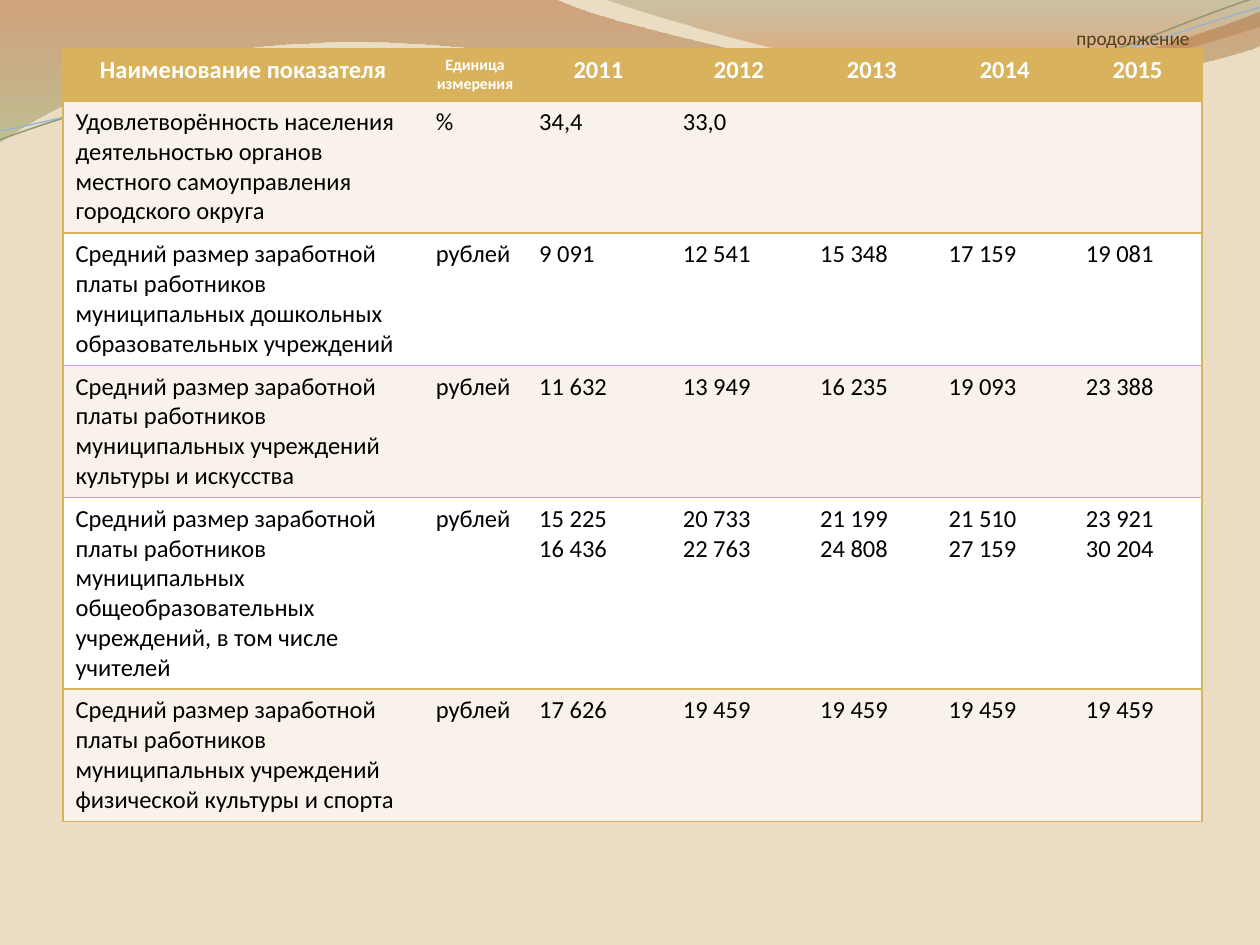
from lxml.etree import SubElement
from pptx import Presentation
from pptx.dml.color import RGBColor
from pptx.enum.text import PP_ALIGN as Align
from pptx.oxml import parse_xml
from pptx.oxml.ns import nsdecls, qn
from pptx.util import Inches, Pt

SAND = RGBColor(0xEB, 0xDD, 0xC3)
GOLD = RGBColor(0xD8, 0xB2, 0x5C)
CREAM = RGBColor(0xF8, 0xF2, 0xEA)
WHITE = RGBColor(0xFF, 0xFF, 0xFF)
BLACK = RGBColor(0, 0, 0)
BROWN = RGBColor(0x51, 0x3E, 0x1B)
OLIVE = RGBColor(0x92, 0x97, 0x72)
BLUE = RGBColor(0x94, 0xB6, 0xD2)
RUST = RGBColor(0xAF, 0x5C, 0x29)
MOSS = RGBColor(0x9D, 0xA6, 0x6B)
SAGE = RGBColor(0x7D, 0x83, 0x5B)
ORANGE = RGBColor(0xDD, 0x6B, 0x24)
FONT = "Calibri"

presentation = Presentation()
presentation.slide_width, presentation.slide_height = Inches(10), Inches(7.5)
WIDTH, HEIGHT = presentation.slide_width, presentation.slide_height
slide = presentation.slides.add_slide(presentation.slide_layouts[6])
slide.background.fill.solid()
slide.background.fill.fore_color.rgb = SAND


def add_wave(segments, closed):
    """Draw a path of points (2 numbers) and cubic curves (6 numbers), in inches."""
    segments = [[round(value * 100) for value in segment] for segment in segments]
    ends = [segment[-2:] for segment in segments]
    builder = slide.shapes.build_freeform(*ends[0], scale=Inches(0.01))
    builder.add_line_segments(ends[1:], close=closed)
    shape = builder.convert_to_shape()
    shape.shadow.inherit = False
    # Turn the straight pieces that have control points into curves
    left, top = (min(values) for values in zip(*ends))
    pieces = list(shape.element.iter(qn("a:lnTo")))
    for piece, segment in zip(pieces, segments[1:]):
        if len(segment) == 6:
            piece.tag = qn("a:cubicBezTo")
            piece.clear()
            for x, y in zip(segment[::2], segment[1::2]):
                SubElement(piece, qn("a:pt"), x=str(x - left), y=str(y - top))
    return shape


# Translucent waves: path, then gradient stops (position %, colour, opacity %)
waves = [
    ([(0, 0), (4.4, -0.01), (4.76, 0.17, 6.64, 0.63, 7.58, 0.63),
      (8.53, 0.63, 9.58, 0.26, 10, 0.09), (10.01, 0.36),
      (9.83, 0.44, 8.7, 0.76, 7.46, 0.75), (6.22, 0.75, 3.82, 0.28, 2.57, 0.34),
      (1.29, 0.36, 0.46, 0.83, -0.01, 1.13)],
     [(0, RUST, 45), (100, MOSS, 55)]),
    ([(4.79, -0.01), (5.09, 0.11, 6.82, 0.62, 7.69, 0.65),
      (8.56, 0.69, 9.61, 0.32, 10, 0.21), (10, 0)],
     [(0, SAGE, 30), (80, ORANGE, 45)]),
]
for path, stops in waves:
    wave = add_wave(path, True)
    wave.line.fill.background()
    stop_xml = "".join(
        f'<a:gs pos="{position * 1000}"><a:srgbClr val="{color}">'
        f'<a:alpha val="{opacity * 1000}"/></a:srgbClr></a:gs>'
        for position, color, opacity in stops)
    gradient = parse_xml(f'<a:gradFill {nsdecls("a")}><a:gsLst>{stop_xml}</a:gsLst>'
                         '<a:lin ang="5400000" scaled="0"/></a:gradFill>')
    wave.element.spPr.find(qn("a:custGeom")).addnext(gradient)

# Thin curved lines
curves = [
    ([(0, 1.11), (0.48, 0.93, 1.58, 0.57, 2.77, 0.52),
      (3.95, 0.47, 5.93, 0.89, 7.13, 0.8), (8.33, 0.71, 9.38, 0.15, 9.98, -0.02)],
     OLIVE, 0.85),
    ([(0, 1.04), (0.47, 0.96, 1.64, 0.61, 2.83, 0.56),
      (4.03, 0.51, 5.97, 0.84, 7.17, 0.75), (8.36, 0.67, 9.41, 0.21, 10, 0.06)],
     BLUE, 0.75),
]
for path, color, weight in curves:
    curve = add_wave(path, False)
    curve.fill.background()
    curve.line.color.rgb = color
    curve.line.width = Pt(weight)

# Table of indicators
SALARY = "Средний размер заработной платы работников муниципальных "
rows = [
    ["Наименование показателя", "Единица измерения", "2011", "2012", "2013", "2014", "2015"],
    ["Удовлетворённость населения деятельностью органов местного самоуправления "
     "городского округа", "%", "34,4", "33,0", "", "", ""],
    [SALARY + "дошкольных образовательных учреждений", "рублей",
     "9 091", "12 541", "15 348", "17 159", "19 081"],
    [SALARY + "учреждений культуры и искусства", "рублей",
     "11 632", "13 949", "16 235", "19 093", "23 388"],
    [SALARY + "общеобразовательных учреждений, в том числе учителей", "рублей",
     "15 225\n16 436", "20 733\n22 763", "21 199\n24 808", "21 510\n27 159", "23 921\n30 204"],
    [SALARY + "учреждений физической культуры и спорта", "рублей",
     "17 626", "19 459", "19 459", "19 459", "19 459"],
]
column_widths = [2.86, 0.82, 1.14, 1.09, 1.02, 1.09, 1.02]
row_heights = [0.41, 1.05, 1.05, 1.05, 1.52, 1.05]
frame = slide.shapes.add_table(len(rows), len(column_widths), int(WIDTH * 0.05), Inches(0.39),
                               Inches(sum(column_widths)), Inches(sum(row_heights)))
table = frame.table
NO_STYLE = "{2D5ABB26-0587-4C30-8999-92F81FD0307C}"
frame.element.find(".//" + qn("a:tableStyleId")).text = NO_STYLE
for column, width in zip(table.columns, column_widths):
    column.width = Inches(width)
for row, height in zip(table.rows, row_heights):
    row.height = Inches(height)

last = len(column_widths) - 1
for r, texts in enumerate(rows):
    for c, text in enumerate(texts):
        cell = table.cell(r, c)
        properties = cell._tc.get_or_add_tcPr()
        sides = ["L"] * (c == 0) + ["R"] * (c == last) + ["T", "B"]
        for side in sides:
            border = SubElement(properties, qn(f"a:ln{side}"), w=str(Pt(1)))
            solid = SubElement(border, qn("a:solidFill"))
            SubElement(solid, qn("a:srgbClr"), val=str(GOLD))
        cell.fill.solid()
        cell.fill.fore_color.rgb = GOLD if r == 0 else CREAM if r % 2 else WHITE
        cell.text = text
        for paragraph in cell.text_frame.paragraphs:
            paragraph.alignment = Align.CENTER if r == 0 else Align.LEFT
            paragraph.font.name = FONT
            paragraph.font.size = Pt(9 if (r, c) == (0, 1) else 14)
            paragraph.font.bold = r == 0
            paragraph.font.color.rgb = WHITE if r == 0 else BLACK

# Continuation note
note = slide.shapes.add_textbox(int(WIDTH * 0.79), Inches(0.16), Inches(1.64), Inches(0.29))
note.text_frame.word_wrap = True
paragraph = note.text_frame.paragraphs[0]
paragraph.text = "продолжение"
paragraph.alignment = Align.RIGHT
paragraph.font.name = FONT
paragraph.font.size = Pt(11)
paragraph.font.color.rgb = BROWN

presentation.save("out.pptx")
